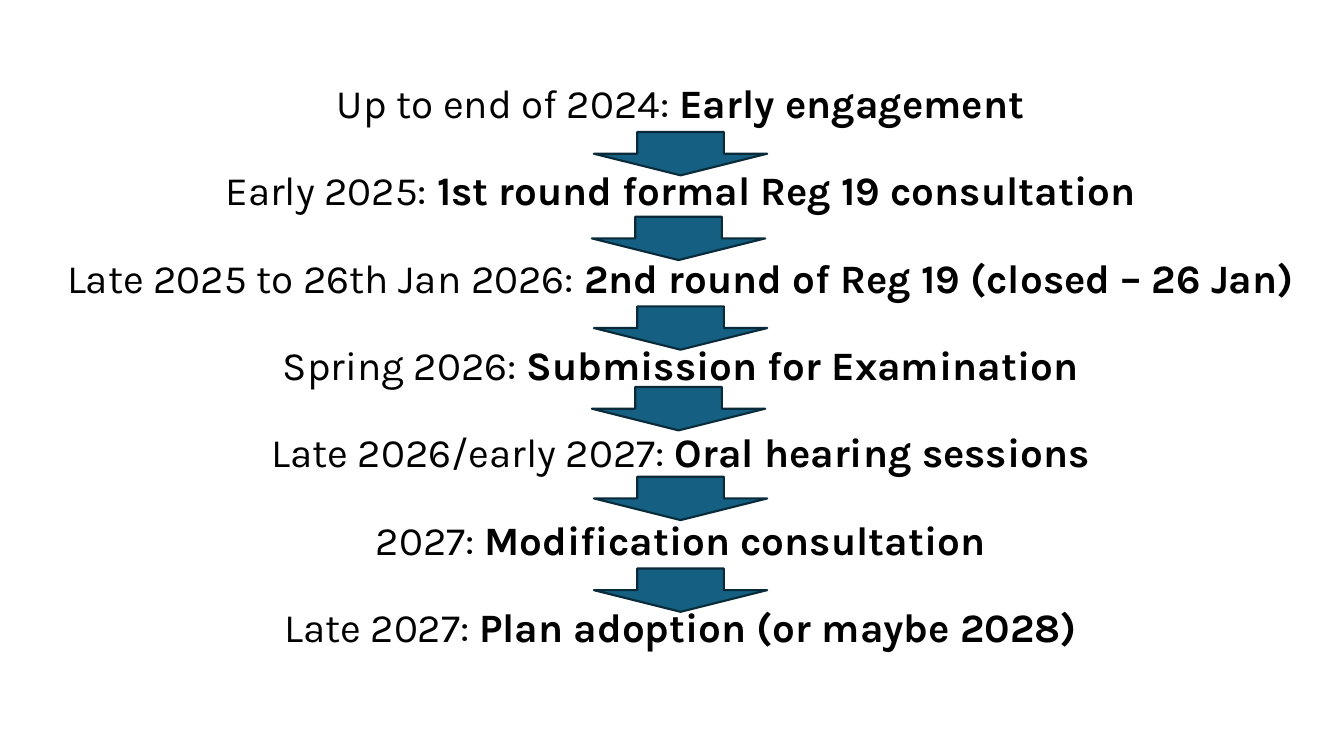
from pptx import Presentation
from pptx.dml.color import RGBColor
from pptx.enum.shapes import MSO_SHAPE as Shape
from pptx.enum.text import MSO_ANCHOR as Anchor, MSO_AUTO_SIZE as Fit, PP_ALIGN as Align
from pptx.util import Inches, Pt

STEPS = [
    ("Up to end of 2024: ", "Early engagement"),
    ("Early 2025: ", "1st round formal Reg 19 consultation"),
    ("Late 2025 to 26th Jan 2026: ", "2nd round of Reg 19 (closed – 26 Jan)"),
    ("Spring 2026: ", "Submission for Examination"),
    ("Late 2026/early 2027: ", "Oral hearing sessions"),
    ("2027: ", "Modification consultation"),
    ("Late 2027: ", "Plan adoption (or maybe 2028)"),
]
ARROWS = [(44.19, 17.47), (44.04, 28.67), (44.19, 40.53),
          (44.04, 51.2), (44.19, 63.07), (44.19, 75.2)]


def tint(code):
    return RGBColor.from_string(code)


def apply(item, style):
    for name, value in style.items():
        setattr(item, name, value)


class Deck:
    font = {"name": "Karla", "size": Pt(28.8)}
    frame = {"word_wrap": True, "auto_size": Fit.NONE, "vertical_anchor": Anchor.TOP,
             "margin_left": Inches(0.1), "margin_right": Inches(0.1),
             "margin_top": Inches(0.05), "margin_bottom": Inches(0.05)}
    pitch = Pt(31.2)
    ink, fill, edge = "000000", "156082", "092A39"

    def __init__(self, wide, high):
        self.show = Presentation()
        apply(self.show, {"slide_width": Inches(wide), "slide_height": Inches(high)})
        self.slide = self.show.slides.add_slide(self.show.slide_layouts[5])

    def box(self, left, top, wide, high):
        across, down = self.show.slide_width / 100, self.show.slide_height / 100
        return [int(left * across), int(top * down), int(wide * across), int(high * down)]

    def title(self, steps, *area):
        title = self.slide.shapes.title
        apply(title, dict(zip(("left", "top", "width", "height"), self.box(*area))))
        text = title.text_frame
        apply(text, self.frame)
        for row, step in enumerate(steps):
            para = text.add_paragraph() if row else text.paragraphs[0]
            apply(para, {"alignment": Align.CENTER, "line_spacing": self.pitch,
                         "space_before": self.pitch if row else Pt(0), "space_after": Pt(0)})
            for words, bold in zip(step, (False, True)):
                run = para.add_run()
                run.text = words
                apply(run.font, {**self.font, "bold": bold})
                run.font.color.rgb = tint(self.ink)

    def arrow(self, *area):
        arrow = self.slide.shapes.add_shape(Shape.DOWN_ARROW, *self.box(*area))
        arrow.shadow.inherit = False
        arrow.fill.solid()
        arrow.fill.fore_color.rgb = tint(self.fill)
        arrow.line.color.rgb = tint(self.edge)
        arrow.line.width = Pt(1.5)

    def save(self):
        self.show.save("out.pptx")


def main():
    deck = Deck(13.33, 7.5)
    deck.title(STEPS, 2.78, 10.27, 95.72, 81.07)
    for left, top in ARROWS:
        deck.arrow(left, top, 12.9, 5.73)
    deck.save()


if __name__ == "__main__":
    main()
